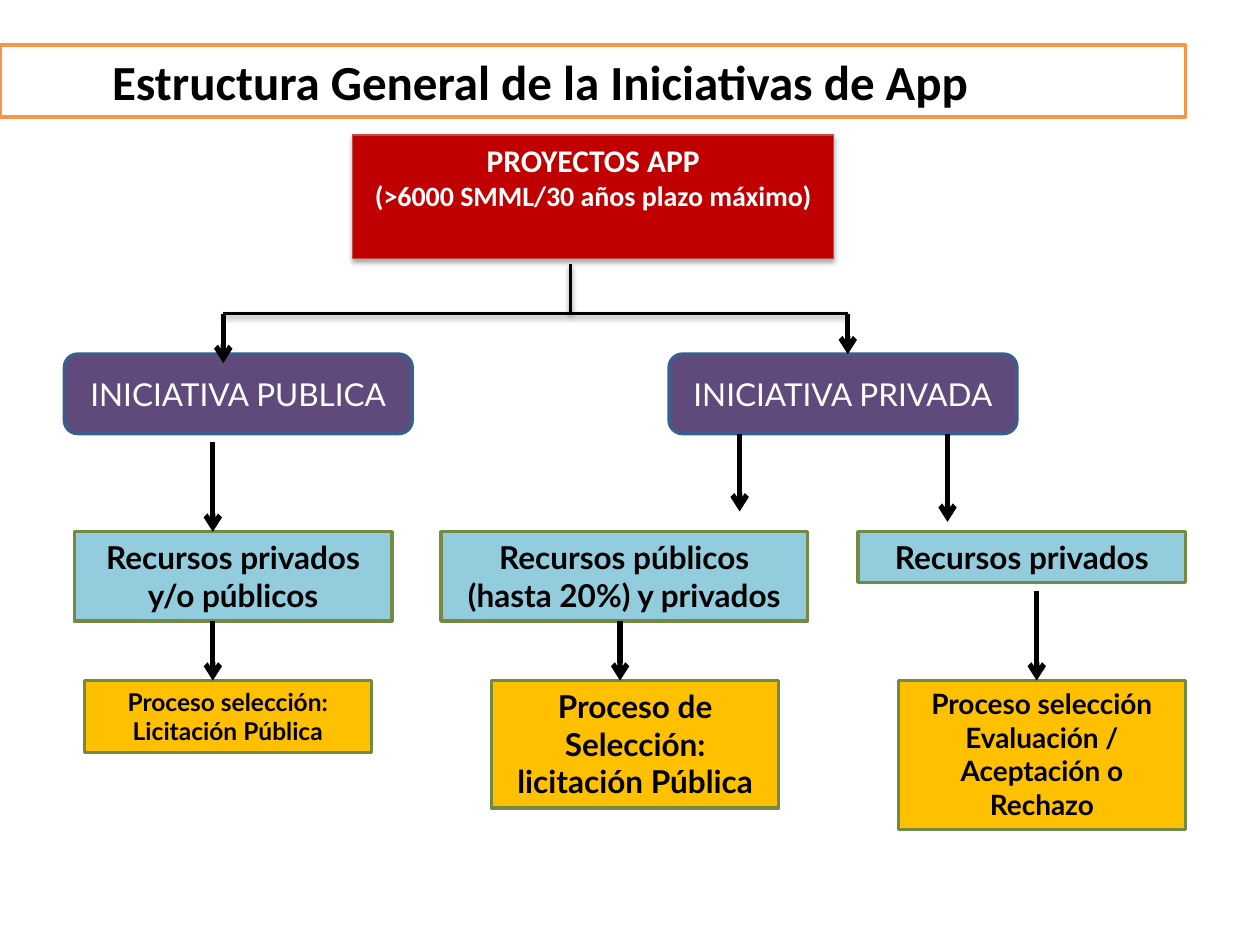
"""Build the slide on the general structure of public-private initiatives."""
from dataclasses import dataclass

from lxml.etree import SubElement
from pptx import Presentation
from pptx.dml.color import RGBColor
from pptx.enum.shapes import MSO_CONNECTOR, MSO_SHAPE
from pptx.enum.text import MSO_ANCHOR, MSO_AUTO_SIZE, PP_ALIGN
from pptx.oxml.ns import qn
from pptx.util import Cm, Pt

COLORS = {
    "white": "FFFFFF", "black": "000000", "orange": "F79646",
    "red": "C00000", "red_edge": "BF4C48",
    "purple": "604A7B", "blue_edge": "3A5F8C",
    "sky": "93CDDD", "gold": "FFC000", "green_edge": "738A42",
}


@dataclass(frozen=True)
class Style:
    fill: str
    edge: str
    edge_width: float = 2
    color: str = "black"
    bold: bool = True
    font: str = "Lato"
    preset: MSO_SHAPE = MSO_SHAPE.RECTANGLE
    anchor: MSO_ANCHOR = MSO_ANCHOR.TOP
    shadow: bool = False


@dataclass(frozen=True)
class Box:
    lines: tuple[str, ...]
    left: float
    top: float
    width: float
    height: float
    style: Style
    sizes: tuple[int, ...] = (18,)


@dataclass(frozen=True)
class Link:
    start: tuple[float, float]
    end: tuple[float, float]
    arrow: bool = True


PROJECT = Style("red", "red_edge", 0.75, "white", font="Calibri", shadow=True)
INITIATIVE = Style("purple", "blue_edge", color="white", bold=False,
                   preset=MSO_SHAPE.ROUNDED_RECTANGLE, anchor=MSO_ANCHOR.MIDDLE)
RESOURCE = Style("sky", "green_edge")
PROCESS = Style("gold", "green_edge")

INITIATIVE_TOP, INITIATIVE_BOTTOM = 7.14, 8.74
RESOURCE_TOP, RESOURCE_BOTTOM = 10.72, 12.52
PROCESS_TOP, PROCESS_WIDTH = 13.72, 5.79
BRANCH_Y, PUBLIC_X, PRIVATE_X, TRUNK_X = 6.32, 4.5, 17.09, 11.5

BOXES = (
    Box(("PROYECTOS APP", "(>6000 SMML/30 años plazo máximo)"),
        7.11, 2.72, 9.7, 2.49, PROJECT, (18, 16)),
    Box(("INICIATIVA PUBLICA",), 1.3, INITIATIVE_TOP, 7.01, 1.6, INITIATIVE),
    Box(("INICIATIVA PRIVADA",), 13.49, INITIATIVE_TOP, 7.01, 1.6, INITIATIVE),
    Box(("Recursos privados y/o públicos",), 1.5, RESOURCE_TOP, 6.4, 1.8, RESOURCE),
    Box(("Recursos públicos (hasta 20%) y privados",),
        8.89, RESOURCE_TOP, 7.39, 1.8, RESOURCE),
    Box(("Recursos privados",), 17.3, RESOURCE_TOP, 6.6, 1.02, RESOURCE),
    Box(("Proceso selección:", "Licitación Pública"),
        1.7, PROCESS_TOP, PROCESS_WIDTH, 1.45, PROCESS, (14, 14)),
    Box(("Proceso de Selección: licitación Pública",),
        9.91, PROCESS_TOP, PROCESS_WIDTH, 2.57, PROCESS),
    Box(("Proceso selección Evaluación / Aceptación o Rechazo",),
        18.11, PROCESS_TOP, PROCESS_WIDTH, 3, PROCESS, (16,)),
)

LINKS = (
    Link((14.91, INITIATIVE_BOTTOM), (14.91, 10.31)),
    Link((19.1, INITIATIVE_BOTTOM), (19.1, 10.52)),
    Link((12.5, RESOURCE_BOTTOM), (12.5, PROCESS_TOP)),
    Link((20.9, 11.91), (20.9, PROCESS_TOP)),
    Link((4.29, RESOURCE_BOTTOM), (4.29, PROCESS_TOP)),
    Link((4.29, 8.92), (4.29, RESOURCE_TOP)),
    Link((PUBLIC_X, BRANCH_Y), (PUBLIC_X, 7.32)),
    Link((PRIVATE_X, BRANCH_Y), (PRIVATE_X, INITIATIVE_TOP)),
    Link((PUBLIC_X, BRANCH_Y), (PRIVATE_X, BRANCH_Y), arrow=False),
    Link((TRUNK_X, 5.33), (TRUNK_X, BRANCH_Y), arrow=False),
)


def rgb(name: str) -> RGBColor:
    return RGBColor.from_string(COLORS[name])


def write(frame, lines: tuple[str, ...], *, sizes: tuple[int, ...], font: str,
          color: str = "black", bold: bool = True, align=PP_ALIGN.CENTER,
          anchor=MSO_ANCHOR.TOP) -> None:
    frame.word_wrap = True
    frame.auto_size = MSO_AUTO_SIZE.NONE
    frame.vertical_anchor = anchor
    for index, (line, size) in enumerate(zip(lines, sizes)):
        paragraph = frame.paragraphs[0] if index == 0 else frame.add_paragraph()
        paragraph.alignment = align
        run = paragraph.add_run()
        run.text = line
        run.font.name, run.font.size, run.font.bold = font, Pt(size), bold
        run.font.color.rgb = rgb(color)


def paint(shape, fill: str, edge: str, width: float) -> None:
    shape.fill.solid()
    shape.fill.fore_color.rgb = rgb(fill)
    shape.line.color.rgb = rgb(edge)
    shape.line.width = Pt(width)


def add_shadow(effects, opacity: int) -> None:
    shadow = SubElement(effects, qn("a:outerShdw"), blurRad="40000", dist="22000",
                        dir="5400000", rotWithShape="0")
    tint = SubElement(shadow, qn("a:srgbClr"), val=COLORS["black"])
    SubElement(tint, qn("a:alpha"), val=str(opacity * 1000))


def draw_title(slide) -> None:
    title = slide.shapes.title
    title.left, title.top, title.width, title.height = Cm(0), Cm(0.91), Cm(23.9), Cm(1.45)
    paint(title, "white", "orange", 2)
    title.text_frame.margin_left = Cm(2.26)
    write(title.text_frame, ("Estructura General de la Iniciativas de App",),
          sizes=(28,), font="Calibri", align=PP_ALIGN.LEFT)


def draw_box(slide, box: Box) -> None:
    style = box.style
    shape = slide.shapes.add_shape(style.preset, Cm(box.left), Cm(box.top),
                                   Cm(box.width), Cm(box.height))
    paint(shape, style.fill, style.edge, style.edge_width)
    shape.shadow.inherit = False
    if style.shadow:
        add_shadow(shape._element.spPr.find(qn("a:effectLst")), 35)
    write(shape.text_frame, box.lines, sizes=box.sizes, font=style.font,
          color=style.color, bold=style.bold, anchor=style.anchor)


def draw_link(slide, link: Link) -> None:
    connector = slide.shapes.add_connector(
        MSO_CONNECTOR.STRAIGHT, *map(Cm, link.start), *map(Cm, link.end))
    connector.line.color.rgb = rgb("black")
    connector.line.width = Pt(3 if link.arrow else 2)
    properties = connector._element.spPr
    effects = SubElement(properties, qn("a:effectLst"))
    if link.arrow:
        SubElement(properties.find(qn("a:ln")), qn("a:tailEnd"), type="arrow")
    else:
        add_shadow(effects, 38)


def main() -> None:
    deck = Presentation()
    deck.slide_width, deck.slide_height = Cm(25.4), Cm(19.05)
    slide = deck.slides.add_slide(deck.slide_layouts[5])
    draw_title(slide)
    for box in BOXES:
        draw_box(slide, box)
    for link in LINKS:
        draw_link(slide, link)
    deck.save("out.pptx")


if __name__ == "__main__":
    main()
